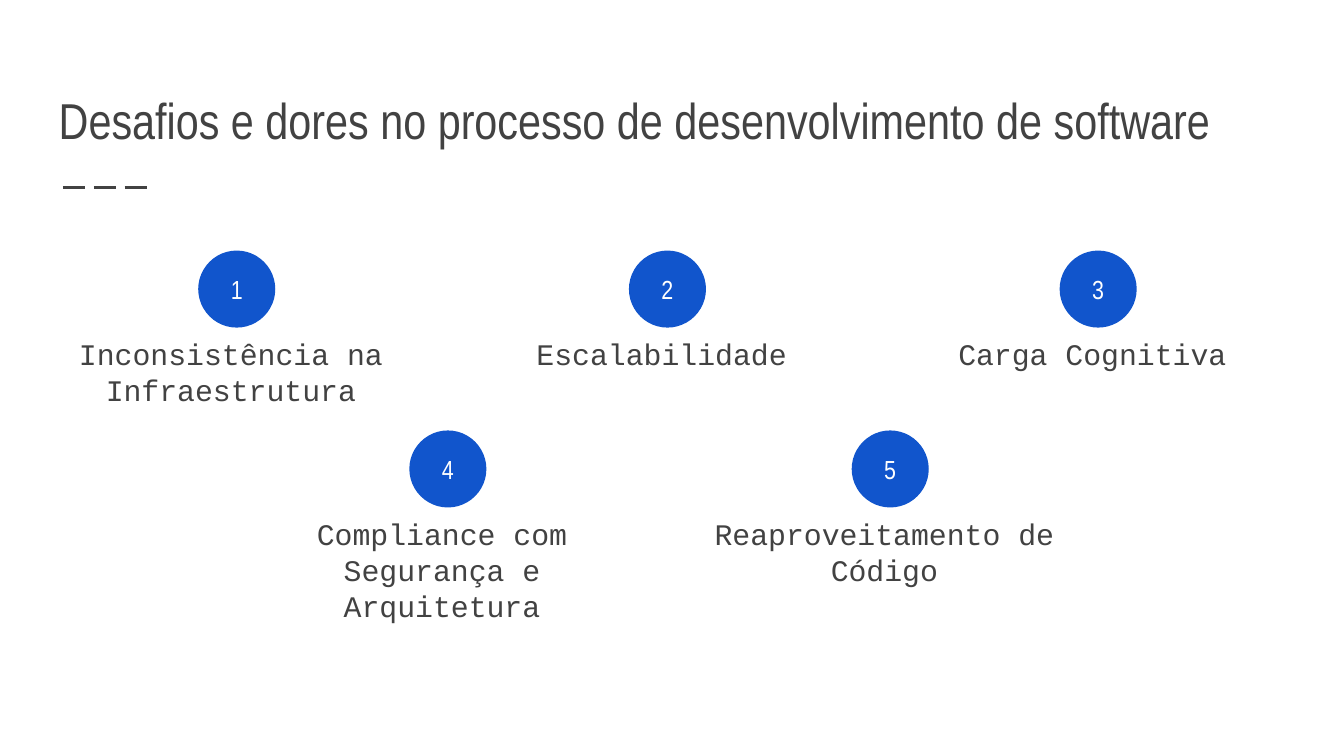
from lxml.etree import SubElement
from pptx import Presentation
from pptx.dml.color import RGBColor
from pptx.enum.dml import MSO_LINE
from pptx.enum.shapes import MSO_CONNECTOR, MSO_SHAPE
from pptx.enum.text import MSO_ANCHOR, MSO_AUTO_SIZE, PP_ALIGN
from pptx.oxml.ns import qn
from pptx.util import Cm, Pt

GRAY, BLUE, WHITE = "424242", "1155CC", "FFFFFF"
HEADING_FONT, LABEL_FONT = "Arial Narrow", "Courier New"
CIRCLE, LABEL_WIDTH = 1.43, 7.01

# Each row: left of first label, top of circles, step, first number,
# and its labels with the number of lines each one fills
ROWS = [
    (0.86, 4.75, 8.14, 1, [("Inconsistência na Infraestrutura", 2),
                           ("Escalabilidade", 1),
                           ("Carga Cognitiva", 1)]),
    (4.85, 8.15, 8.36, 4, [("Compliance com Segurança e Arquitetura", 3),
                           ("Reaproveitamento de Código", 2)]),
]


def rgb(color):
    return RGBColor.from_string(color)


def set_text(sp, text, size, font, color, align, anchor):
    tf = sp.text_frame
    tf.text = text
    tf.word_wrap = True
    tf.auto_size = MSO_AUTO_SIZE.NONE
    tf.vertical_anchor = anchor
    tf.margin_left = tf.margin_right = Cm(0.25)
    tf.margin_top = tf.margin_bottom = Cm(0.25)
    p = tf.paragraphs[0]
    p.alignment = align
    r = p.runs[0]
    r.font.size = Pt(size)
    r.font.name = font
    r.font.color.rgb = rgb(color)


def add_title(s, text):
    sp = s.shapes.title
    sp.left, sp.top, sp.width, sp.height = Cm(0.86), Cm(1.04), Cm(23.67), Cm(2.03)
    set_text(sp, text, 27, HEADING_FONT, GRAY, PP_ALIGN.LEFT, MSO_ANCHOR.BOTTOM)


def add_dashes(s):
    line = s.shapes.add_connector(MSO_CONNECTOR.STRAIGHT,
                                  Cm(1.19), Cm(3.54), Cm(2.9), Cm(3.54))
    line.line.color.rgb = rgb(GRAY)
    line.line.width = Pt(1.5)
    line.line.dash_style = MSO_LINE.LONG_DASH
    SubElement(line.element.spPr, qn("a:effectLst"))


def add_challenge(s, number, text, lines, left, top):
    group = s.shapes.add_group_shape()

    # Numbered circle, centred above the label
    sp = group.shapes.add_shape(MSO_SHAPE.OVAL,
                                Cm(left + 2.9), Cm(top), Cm(CIRCLE), Cm(CIRCLE))
    sp.shadow.inherit = False
    sp.fill.solid()
    sp.fill.fore_color.rgb = rgb(BLUE)
    sp.line.color.rgb = rgb(BLUE)
    sp.line.width = Pt(0.75)
    set_text(sp, str(number), 14, HEADING_FONT, WHITE,
             PP_ALIGN.CENTER, MSO_ANCHOR.MIDDLE)

    # Label
    sp = group.shapes.add_textbox(Cm(left), Cm(top + 1.35),
                                  Cm(LABEL_WIDTH), Cm(0.5 + 0.69 * lines))
    set_text(sp, text, 16, LABEL_FONT, GRAY, PP_ALIGN.CENTER, MSO_ANCHOR.TOP)
    sp.text_frame.auto_size = MSO_AUTO_SIZE.SHAPE_TO_FIT_TEXT


def main():
    prs = Presentation()
    prs.slide_width, prs.slide_height = Cm(25.4), Cm(14.29)
    s = prs.slides.add_slide(prs.slide_layouts[5])
    s.background.fill.solid()
    s.background.fill.fore_color.rgb = rgb(WHITE)

    # Heading
    add_title(s, "Desafios e dores no processo de desenvolvimento de software")
    add_dashes(s)

    # Challenges
    for left, top, step, first, labels in ROWS:
        for i, (text, lines) in enumerate(labels):
            add_challenge(s, first + i, text, lines, left + i * step, top)

    prs.save("out.pptx")


if __name__ == "__main__":
    main()
